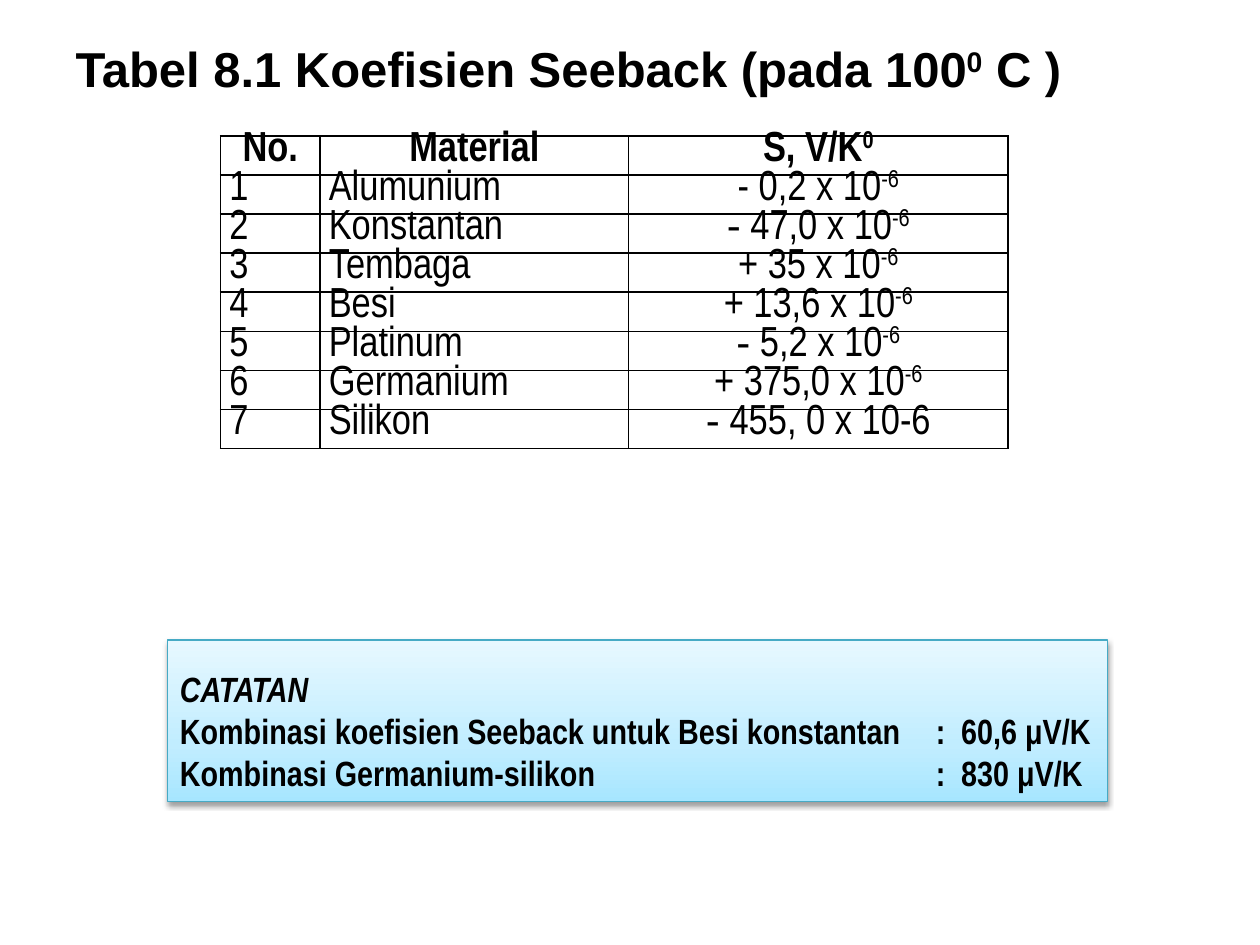
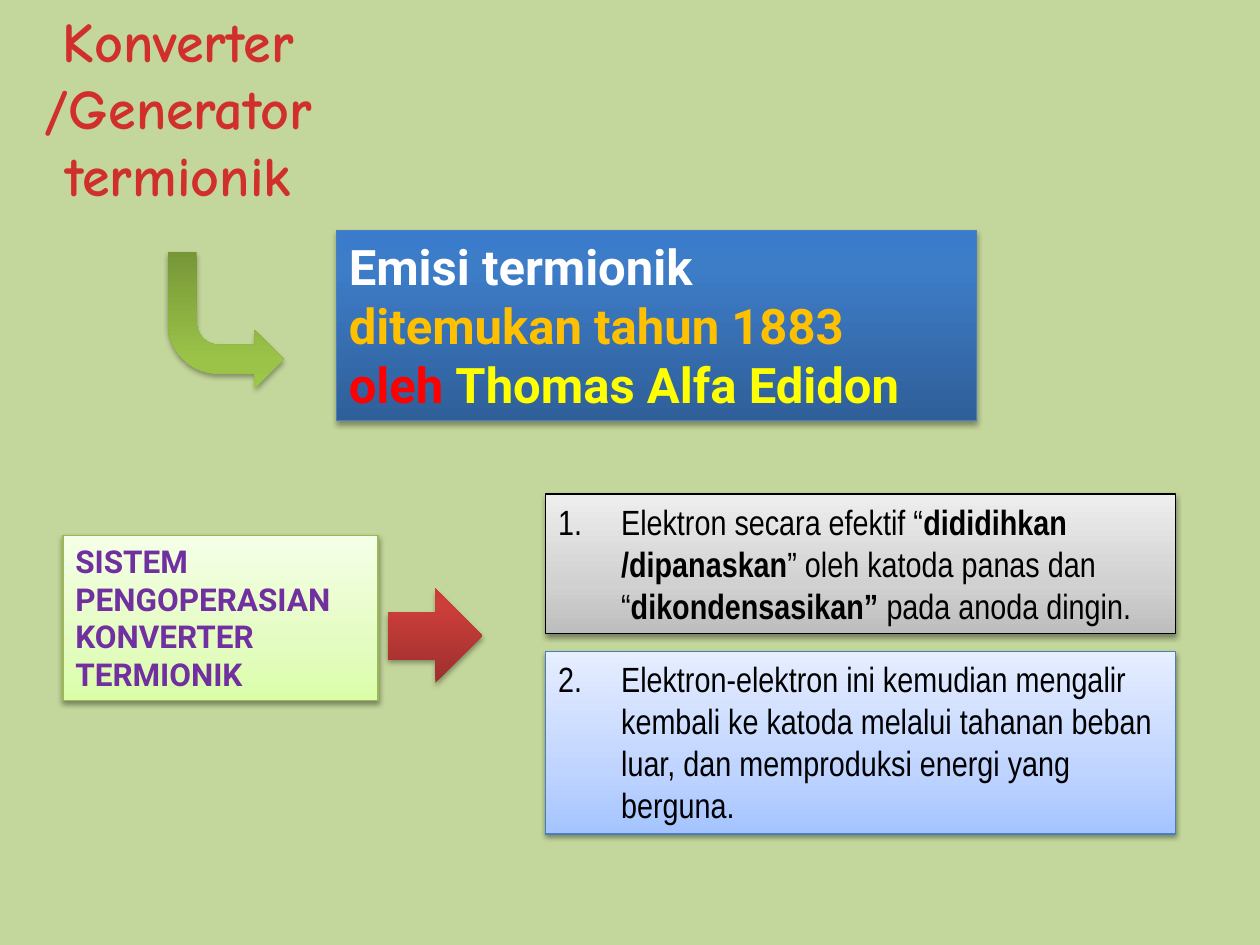
from dataclasses import dataclass
from typing import NamedTuple, Optional

from lxml.etree import SubElement
from pptx import Presentation
from pptx.dml.color import RGBColor
from pptx.enum.shapes import MSO_SHAPE
from pptx.enum.text import MSO_ANCHOR, MSO_AUTO_SIZE, PP_ALIGN
from pptx.oxml.ns import qn
from pptx.util import Pt

PX = 9144  # EMU per px, 100 px to the inch
SLIDE_SIZE = (1000, 750)
TITLE_ONLY, TWO_CONTENT = 5, 3

BLACK = RGBColor(0x00, 0x00, 0x00)
WHITE = RGBColor(0xFF, 0xFF, 0xFF)
SAGE = RGBColor(0xC3, 0xD6, 0x9B)
ORANGE = RGBColor(0xFF, 0xC0, 0x00)
RED = RGBColor(0xFF, 0x00, 0x00)
YELLOW = RGBColor(0xFF, 0xFF, 0x00)
PURPLE = RGBColor(0x70, 0x30, 0xA0)
AQUA_EDGE = RGBColor(0x46, 0xAA, 0xC5)
BLUE_EDGE = RGBColor(0x4B, 0x7E, 0xBC)
GREEN_EDGE = RGBColor(0x98, 0xB9, 0x55)

ARIAL, NARROW, COMIC, ROBOTO = "Arial", "Arial Narrow", "Comic Neue", "Roboto"


class Box(NamedTuple):
    left: int
    top: int
    width: int
    height: int

    def emu(self) -> list[int]:
        return [length * PX for length in self]


class Gradient(NamedTuple):
    colours: tuple[RGBColor, RGBColor, RGBColor]
    middle: int  # percent


def gradient(middle: int, *codes: str) -> Gradient:
    return Gradient(tuple(RGBColor.from_string(code) for code in codes), middle)


# Pale gradients for note panels, strong ones for emphasis
AQUA = gradient(35, "A7E6FF", "C1EDFF", "E7F8FF")
GREY = gradient(35, "BDBDBD", "D1D1D1", "EEEEEE")
LIME = gradient(35, "DAFDA7", "E4FCC2", "F5FFE7")
ICE = gradient(35, "A4C4FF", "BFD4FF", "E6EEFF")
BLUE = gradient(80, "2F5F99", "3D7CC7", "3A7CCB")
GREEN = gradient(80, "779737", "9BC348", "9DC746")
BRICK = gradient(80, "9C2F2D", "CB3E3A", "CE3B37")
TITLE_RED = gradient(75, "FC7C7A", "D02F2C", "C70500")


class Run(NamedTuple):
    text: str
    bold: bool = False
    colour: RGBColor = BLACK
    italic: bool = False
    raised: bool = False


@dataclass(frozen=True)
class Paragraph:
    runs: tuple[Run, ...]
    align: PP_ALIGN = PP_ALIGN.LEFT
    spacing: float = 1.0
    tabs: tuple[int, ...] = ()
    number: int = 0
    dash: bool = False


@dataclass(frozen=True)
class Panel:
    box: Box
    fill: Gradient
    edge: Optional[RGBColor] = None
    kind: MSO_SHAPE = MSO_SHAPE.RECTANGLE
    paragraphs: tuple[Paragraph, ...] = ()
    font: str = NARROW
    size: int = 20
    wrap: bool = True


# Shared helpers
def paint_gradient(fill, parent, colours: Gradient, angle: int) -> None:
    fill.gradient()
    fill.gradient_angle = angle
    stops = parent.find(qn("a:gradFill")).find(qn("a:gsLst"))
    for stop in list(stops):
        stops.remove(stop)
    for place, colour in zip((0, colours.middle, 100), colours.colours):
        stop = SubElement(stops, qn("a:gs"), pos=str(place * 1000))
        SubElement(stop, qn("a:srgbClr"), val=str(colour))


def cast_shadow(shape, strong: bool) -> None:
    shape.shadow.inherit = False
    effects = shape._element.spPr.find(qn("a:effectLst"))
    shadow = SubElement(effects, qn("a:outerShdw"), blurRad="40000",
                        dist="23000" if strong else "20000", dir="5400000",
                        rotWithShape="0")
    colour = SubElement(shadow, qn("a:srgbClr"), val="000000")
    SubElement(colour, qn("a:alpha"), val="35000" if strong else "38000")


def write(frame, paragraphs: tuple[Paragraph, ...], font: str, size: int) -> None:
    for index, content in enumerate(paragraphs):
        line = frame.add_paragraph() if index else frame.paragraphs[0]
        line.alignment = content.align
        line.line_spacing = content.spacing
        line.space_before = Pt(0)
        properties = line._p.get_or_add_pPr()
        if content.number:
            properties.set("marL", str(50 * PX))
            properties.set("indent", str(-50 * PX))
            SubElement(properties, qn("a:buAutoNum"), type="arabicPeriod",
                       startAt=str(content.number))
        if content.dash:
            properties.set("marL", "0")
            properties.set("indent", "0")
            SubElement(properties, qn("a:buFont"), typeface=ARIAL)
            SubElement(properties, qn("a:buChar"), char="-")
        if content.tabs:
            stops = SubElement(properties, qn("a:tabLst"))
            for tab in content.tabs:
                SubElement(stops, qn("a:tab"), pos=str(tab * PX), algn="l")
        for part in content.runs:
            run = line.add_run()
            run.text = part.text
            run.font.name = font
            run.font.size = Pt(size)
            run.font.bold = part.bold
            run.font.italic = part.italic
            run.font.color.rgb = part.colour
            if part.raised:
                run._r.get_or_add_rPr().set("baseline", "30000")


def place(shape, box: Box) -> None:
    shape.left, shape.top, shape.width, shape.height = box.emu()


def set_title(slide, box: Box, content: Paragraph, font: str, size: int,
              anchor: MSO_ANCHOR) -> None:
    title = slide.shapes.title
    place(title, box)
    frame = title.text_frame
    frame.word_wrap = True
    frame.auto_size = MSO_AUTO_SIZE.NONE
    frame.vertical_anchor = anchor
    write(frame, (content,), font, size)


def style_panel(shape, panel: Panel) -> None:
    paint_gradient(shape.fill, shape._element.spPr, panel.fill, 90)
    if panel.edge is None:
        shape.line.fill.background()
    else:
        shape.line.color.rgb = panel.edge
        shape.line.width = Pt(0.75)
    cast_shadow(shape, strong=panel.fill.middle == 80)
    if panel.paragraphs:
        frame = shape.text_frame
        frame.word_wrap = panel.wrap
        frame.auto_size = MSO_AUTO_SIZE.NONE
        frame.vertical_anchor = MSO_ANCHOR.TOP
        write(frame, panel.paragraphs, panel.font, panel.size)


def add_panel(slide, panel: Panel):
    shape = slide.shapes.add_shape(panel.kind, *panel.box.emu())
    style_panel(shape, panel)
    return shape


def border_cell(cell) -> None:
    properties = cell._tc.get_or_add_tcPr()
    for index, side in enumerate(("lnL", "lnR", "lnT", "lnB")):
        border = properties.makeelement(qn(f"a:{side}"), {"w": "12700"})
        fill = SubElement(border, qn("a:solidFill"))
        SubElement(fill, qn("a:srgbClr"), val=str(BLACK))
        properties.insert(index, border)


# Slide 1: Seebeck coefficients
COLUMN_WIDTHS = (79, 245, 301)
ROW_HEIGHT = 31
TABLE_SPACING = 0.79
# Material, coefficient, exponent, sign set as a dash bullet
MATERIALS = (
    ("Alumunium", "- 0,2 x 10", "-6", False),
    ("Konstantan", " 47,0 x 10", "-6", True),
    ("Tembaga", "+ 35 x 10", "-6", False),
    ("Besi", "+ 13,6 x 10", "-6", False),
    ("Platinum", " 5,2 x 10", "-6", True),
    ("Germanium", "+ 375,0 x 10", "-6", False),
    ("Silikon", " 455, 0 x 10-6", "", True),
)


def table_rows() -> list[list[Paragraph]]:
    def entry(*runs: Run, align: PP_ALIGN = PP_ALIGN.CENTER, dash: bool = False) -> Paragraph:
        return Paragraph(runs, align, TABLE_SPACING, dash=dash)

    rows = [[entry(Run("No.", True)), entry(Run("Material", True)),
             entry(Run("S, V/K", True), Run("0", True, raised=True))]]
    for number, (material, value, exponent, dash) in enumerate(MATERIALS, 1):
        power = (Run(exponent, raised=True),) if exponent else ()
        rows.append([entry(Run(str(number)), align=PP_ALIGN.JUSTIFY),
                     entry(Run(material), align=PP_ALIGN.JUSTIFY),
                     entry(Run(value), *power, dash=dash)])
    return rows


def build_seebeck(deck) -> None:
    slide = deck.slides.add_slide(deck.slide_layouts[TITLE_ONLY])
    heading = Paragraph((Run("Tabel 8.1 Koefisien Seeback (pada 100", True),
                         Run("0", True, raised=True), Run(" C )", True)), PP_ALIGN.JUSTIFY)
    set_title(slide, Box(50, 25, 908, 57), heading, ARIAL, 28, MSO_ANCHOR.MIDDLE)

    rows = table_rows()
    area = Box(175, 108, sum(COLUMN_WIDTHS), ROW_HEIGHT * len(rows))
    table = slide.shapes.add_table(len(rows), len(COLUMN_WIDTHS), *area.emu()).table
    table.first_row = table.horz_banding = False
    for column, width in zip(table.columns, COLUMN_WIDTHS):
        column.width = width * PX
    for row, contents in zip(table.rows, rows):
        row.height = ROW_HEIGHT * PX
        for cell, content in zip(row.cells, contents):
            cell.margin_left = cell.margin_right = 7 * PX
            cell.margin_top = cell.margin_bottom = 0
            cell.fill.background()
            border_cell(cell)
            write(cell.text_frame, (content,), NARROW, 24)

    tabs = (600, 620)
    add_panel(slide, Panel(Box(133, 508, 746, 128), AQUA, AQUA_EDGE, wrap=False, paragraphs=(
        Paragraph((Run("CATATAN", True, italic=True),), spacing=1.5),
        Paragraph((Run("Kombinasi koefisien Seeback untuk Besi konstantan\t:\t60,6 μV/K",
                       True),), tabs=tabs),
        Paragraph((Run("Kombinasi Germanium-silikon\t:\t830 μV/K", True),), tabs=tabs))))


# Slide 2: thermionic converter
def build_thermionic(deck) -> None:
    slide = deck.slides.add_slide(deck.slide_layouts[TWO_CONTENT])
    slide.background.fill.solid()
    slide.background.fill.fore_color.rgb = SAGE
    heading = Paragraph((Run("Konverter /Generator termionik", True),), PP_ALIGN.CENTER)
    set_title(slide, Box(0, 0, 283, 172), heading, COMIC, 32, MSO_ANCHOR.TOP)
    title_run = slide.shapes.title.text_frame.paragraphs[0].runs[0]
    paint_gradient(title_run.font.fill, title_run._r.get_or_add_rPr(), TITLE_RED, 270)

    # Discovery
    add_panel(slide, Panel(Box(267, 183, 508, 151), BLUE, BLUE_EDGE, font=ROBOTO, size=28,
                           paragraphs=(
        Paragraph((Run("Emisi termionik", True, WHITE),)),
        Paragraph((Run("ditemukan tahun 1883", True, ORANGE),)),
        Paragraph((Run("oleh ", True, RED), Run("Thomas Alfa Edidon", True, YELLOW))))))
    discovery_arrow = add_panel(slide, Panel(Box(133, 200, 92, 108), GREEN,
                                             kind=MSO_SHAPE.BENT_ARROW))
    discovery_arrow.rotation = 180
    discovery_arrow._element.spPr.find(qn("a:xfrm")).set("flipH", "1")

    # Operating system and its two steps
    add_panel(slide, Panel(Box(50, 425, 250, 131), LIME, GREEN_EDGE, font=ROBOTO, size=18,
                           paragraphs=(
        Paragraph((Run("SISTEM PENGOPERASIAN KONVERTER TERMIONIK", True, PURPLE),)),)))
    add_panel(slide, Panel(Box(308, 467, 75, 75), BRICK, kind=MSO_SHAPE.RIGHT_ARROW))
    steps = (
        Panel(Box(433, 392, 500, 111), GREY, BLACK, paragraphs=(Paragraph((
            Run("Elektron secara efektif “"), Run("dididihkan /dipanaskan", True),
            Run("” oleh katoda panas dan “"), Run("dikondensasikan” ", True),
            Run("pada anoda dingin.")), number=1),)),
        Panel(Box(433, 517, 500, 145), ICE, BLUE_EDGE, paragraphs=(Paragraph((
            Run("Elektron-elektron ini kemudian mengalir kembali ke katoda melalui "
                "tahanan beban luar, dan memproduksi energi yang berguna."),), number=2),)),
    )
    for index, step in enumerate(steps, 1):
        body = slide.placeholders[index]
        place(body, step.box)
        style_panel(body, step)


def main() -> None:
    deck = Presentation()
    deck.slide_width, deck.slide_height = (length * PX for length in SLIDE_SIZE)
    build_seebeck(deck)
    build_thermionic(deck)
    deck.save("out.pptx")


if __name__ == "__main__":
    main()
